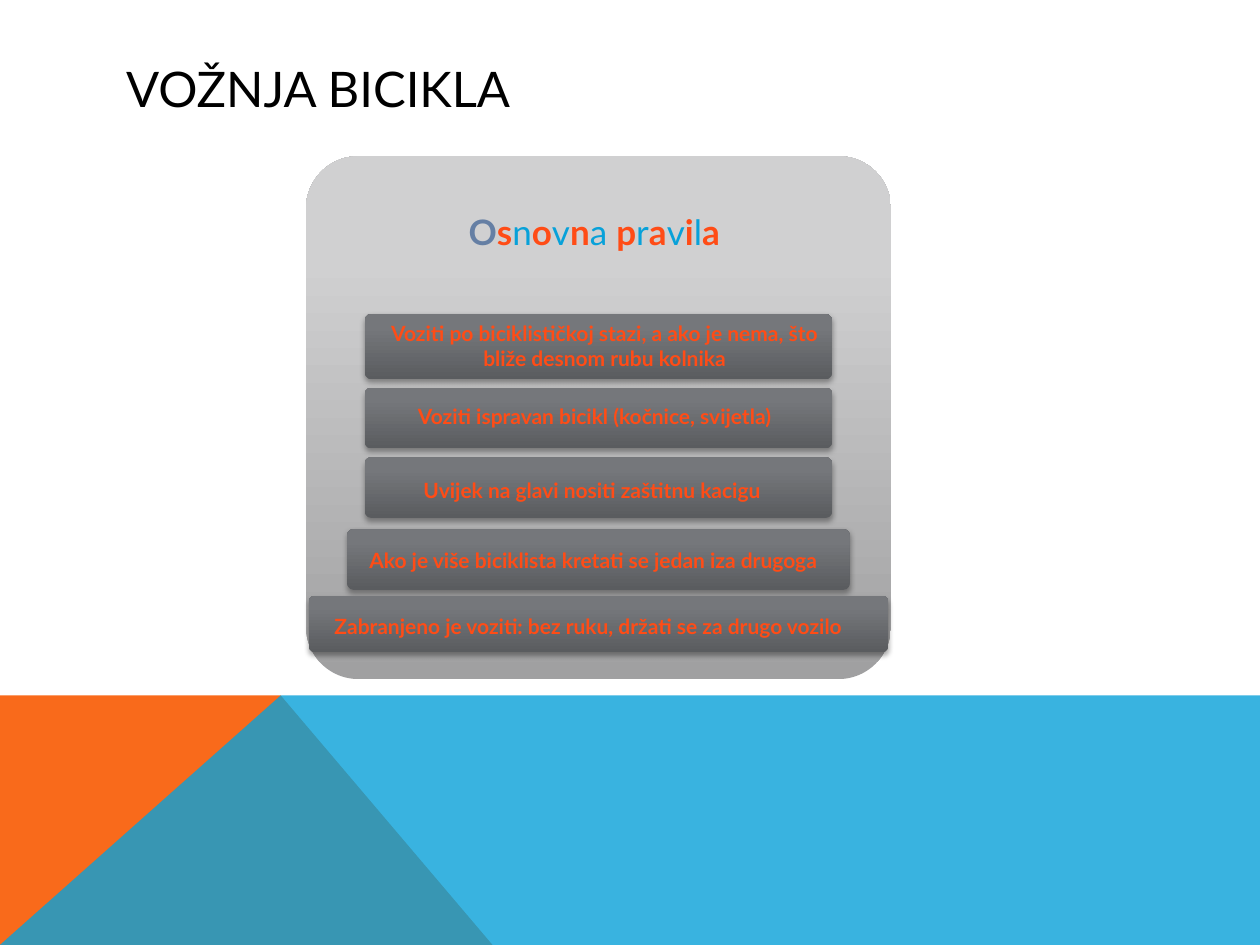
from copy import deepcopy

from pptx import Presentation
from pptx.dml.color import RGBColor
from pptx.enum.shapes import MSO_SHAPE as Shape
from pptx.enum.text import MSO_ANCHOR as Anchor, PP_ALIGN as Align
from pptx.oxml import parse_xml
from pptx.oxml.ns import nsdecls, qn
from pptx.util import Cm, Pt

FONT = "Lato"
ORANGE, BLUE, SLATE = "FF4C16", "08A1D9", "657FA4"
PANEL_STOPS = [(0, "A0A0A1"), (0.8, "D0D0D1"), (1, "D1D1D2")]
BAR_STOPS = [(0, "5A5C5F"), (0.8, "75777B"), (1, "75787C")]
HEADING = [("O", SLATE), ("s", ORANGE), ("n", BLUE), ("o", ORANGE), ("v", BLUE),
           ("n", ORANGE), ("a ", BLUE), ("p", ORANGE), ("r", BLUE), ("a", ORANGE),
           ("v", BLUE), ("i", ORANGE), ("l", BLUE), ("a ", ORANGE)]
# Each rule: bar top, width, height; text offset, width; wording
RULES = [
    (3.18, 9.42, 1.32, 0, 9.47,
     "Voziti po biciklističkoj stazi, a ako je nema, što bliže desnom rubu kolnika"),
    (4.67, 9.42, 1.22, 0.2, 9.07, "Voziti ispravan bicikl (kočnice, svijetla)"),
    (6.07, 9.42, 1.22, 0.28, 9.07, "Uvijek na glavi nositi zaštitnu kacigu "),
    (7.52, 10.13, 1.22, 0.25, 9.73, "Ako je više biciklista kretati se jedan iza drugoga"),
    (8.86, 11.68, 1.14, 0.23, 11.18,
     "Zabranjeno je voziti: bez ruku, držati se za drugo vozilo "),
]


def color(value):
    """Turn a hex string into a colour."""
    return RGBColor.from_string(value)


def add_span(para, text, size, value, bold=False):
    """Append one formatted run to a paragraph."""
    span = para.add_run()
    span.text = text
    span.font.name = FONT
    span.font.size = Pt(size)
    span.font.bold = bold
    span.font.color.rgb = color(value)


def add_text(page, left, top, width, height):
    """Add a wrapping text box and return it with its centred paragraph."""
    box = page.shapes.add_textbox(Cm(left), Cm(top), Cm(width), Cm(height))
    box.text_frame.word_wrap = True
    para = box.text_frame.paragraphs[0]
    para.alignment = Align.CENTER
    return box, para


def add_rounded(page, left, top, width, height, stops):
    """Add a rounded box shaded from bottom to top."""
    box = page.shapes.add_shape(Shape.ROUNDED_RECTANGLE,
                                Cm(left), Cm(top), Cm(width), Cm(height))
    box.adjustments[0] = 0.1
    box.shadow.inherit = False
    box.line.fill.background()
    box.fill.gradient()
    box.fill.gradient_angle = 90
    stop_list = box.element.spPr.find(".//" + qn("a:gsLst"))
    stop_list.append(deepcopy(stop_list[-1]))
    for stop, (position, value) in zip(box.fill.gradient_stops, stops):
        stop.position = position
        stop.color.rgb = color(value)
    return box


def add_shadow(box):
    """Give a shape a soft shadow below it."""
    box.element.spPr.find(qn("a:effectLst")).append(parse_xml(
        f'<a:outerShdw {nsdecls("a")} blurRad="39370" dist="22860" dir="5400000" '
        'rotWithShape="0"><a:srgbClr val="000000"><a:alpha val="35000"/>'
        '</a:srgbClr></a:outerShdw>'))


def add_polygon(page, left, top, points, value, opacity=100):
    """Draw a filled outline through points given relative to a corner."""
    corners = [(Cm(left + x), Cm(top + y)) for x, y in points]
    builder = page.shapes.build_freeform(*corners[0])
    builder.add_line_segments(corners[1:], close=True)
    shape = builder.convert_to_shape()
    shape.shadow.inherit = False
    shape.line.fill.background()
    shape.fill.solid()
    shape.fill.fore_color.rgb = color(value)
    if opacity < 100:
        shape.element.spPr.find(".//" + qn("a:srgbClr")).append(
            parse_xml(f'<a:alpha {nsdecls("a")} val="{opacity * 1000}"/>'))


def add_footer(page, left, top, width, height):
    """Draw the orange wedge and the translucent blue band over it."""
    peak = 5.66
    add_polygon(page, left, top,
                [(0, height), (0, 0), (peak, 0), (9.93, height)], "F96A1B")
    add_polygon(page, left, top,
                [(0, height), (peak, 0), (width, 0), (width, height)], BLUE, 80)


def add_title(page, left, top, width, height):
    """Place and format the title placeholder."""
    title = page.shapes.title
    title.left, title.top, title.width, title.height = map(Cm, (left, top, width, height))
    title.text_frame.vertical_anchor = Anchor.MIDDLE
    para = title.text_frame.paragraphs[0]
    para.alignment = Align.LEFT
    add_span(para, "VOŽNJA BICIKLA", 28, "000000")


def add_rules(page, left, top, width, height):
    """Build the panel with its heading and centred rule bars."""
    add_rounded(page, left, top, width, height, PANEL_STOPS)
    heading, para = add_text(page, left, top, width, 3.15)
    heading.text_frame.vertical_anchor = Anchor.MIDDLE
    para.line_spacing = 0.9
    for letters, value in HEADING:
        add_span(para, letters, 20, value, value != BLUE)
    for bar_top, bar_width, bar_height, offset, text_width, wording in RULES:
        bar_left = left + (width - bar_width) / 2
        bar = add_rounded(page, bar_left, top + bar_top, bar_width, bar_height, BAR_STOPS)
        add_shadow(bar)
        _, para = add_text(page, bar_left + 0.1, top + bar_top + offset, text_width,
                           bar_height - 2 * offset)
        add_span(para, wording, 12, ORANGE, True)


def main():
    """Build and save the deck."""
    deck = Presentation()
    deck.slide_width, deck.slide_height = Cm(25.4), Cm(19.05)
    page = deck.slides.add_slide(deck.slide_layouts[5])
    add_footer(page, 0, 14.02, 25.4, 5.03)
    add_title(page, 2.29, 1.02, 20.88, 1.52)
    add_rules(page, 6.17, 3.15, 11.79, 10.54)
    deck.save("out.pptx")


if __name__ == "__main__":
    main()
